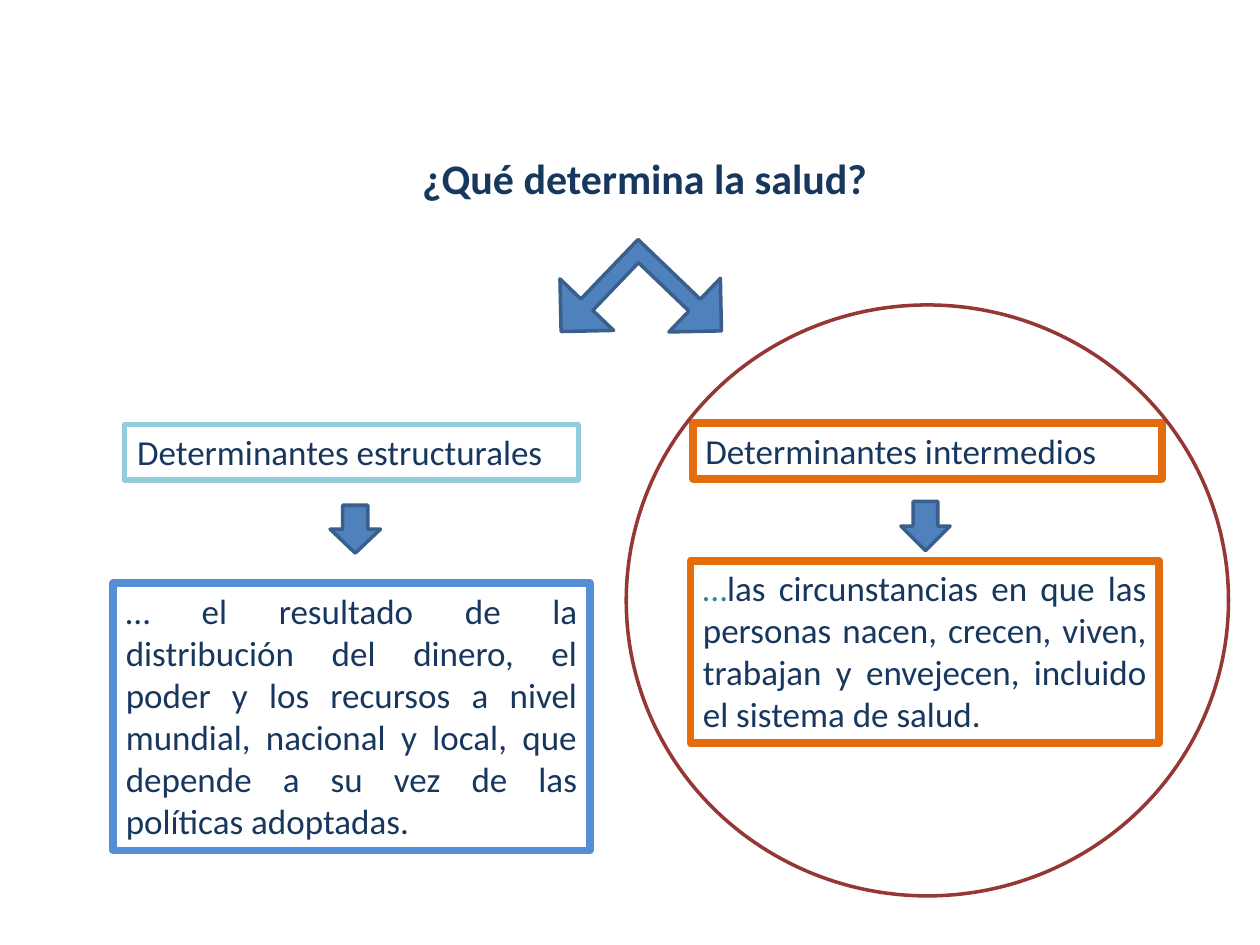
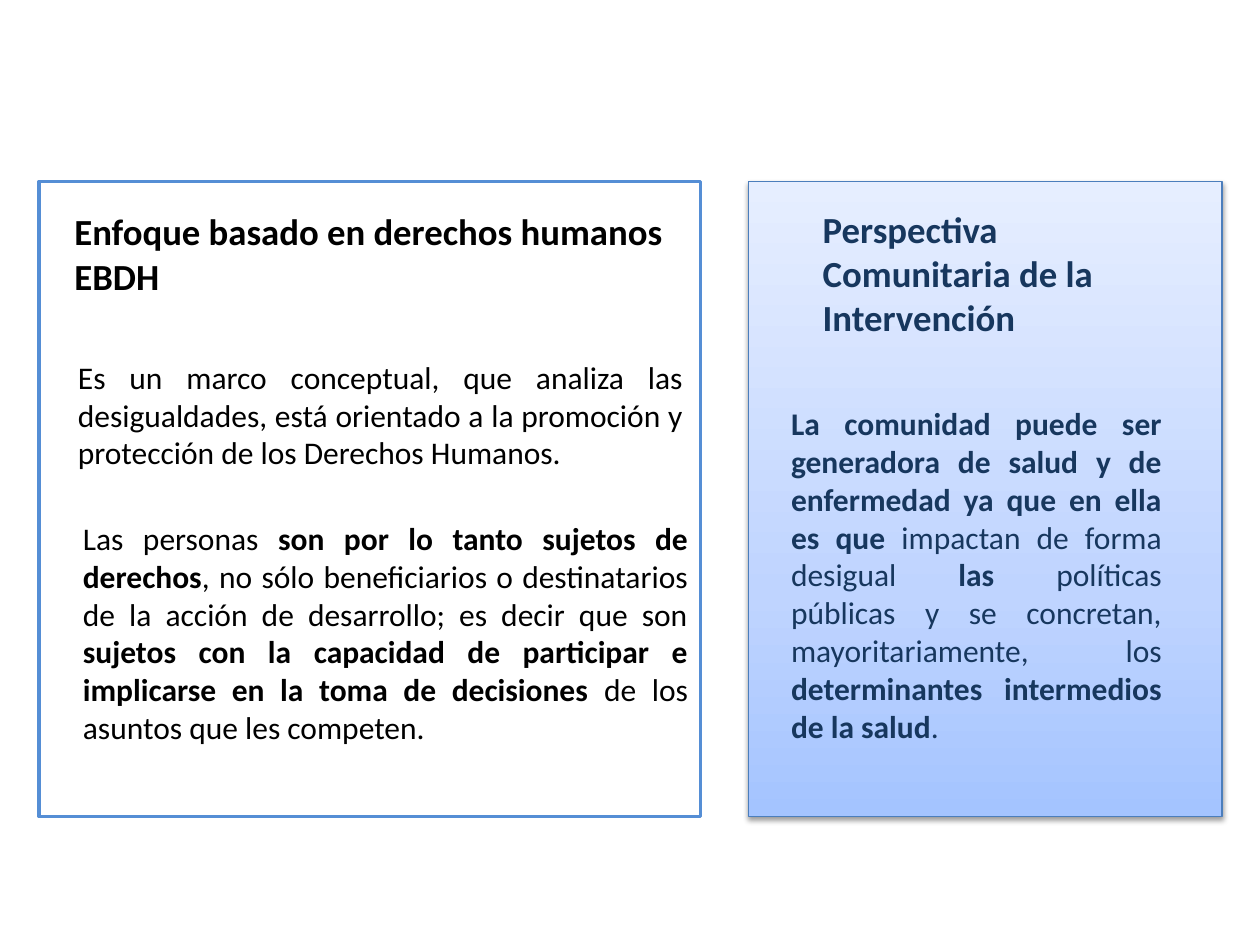
from copy import deepcopy
from dataclasses import dataclass
from lxml.etree import SubElement
from pptx import Presentation
from pptx.dml.color import RGBColor
from pptx.enum.shapes import MSO_SHAPE
from pptx.enum.text import MSO_ANCHOR, MSO_AUTO_SIZE, PP_ALIGN
from pptx.oxml.ns import qn
from pptx.util import Inches, Pt


@dataclass(frozen=True)
class Theme:
    font: str = "Calibri"
    navy: str = "17375E"
    black: str = "000000"
    white: str = "FFFFFF"
    teal: str = "31859C"
    blue: str = "558ED5"
    sky: str = "93CDDD"
    orange: str = "E46C0A"
    wine: str = "953735"
    arrow: str = "4F81BD"
    edge: str = "3A5F8C"
    rim: str = "4B7EBC"
    fade: tuple = ((0, "A4C4FF"), (0.35, "BFD4FF"), (1, "E6EEFF"))
    title: int = 24
    head: int = 21
    body: int = 20
    note: int = 18


T = Theme()
WIDE, HIGH = Inches(10), Inches(7.5)
COLS, ROWS = 100, 75
TIGHT, LOOSE = (0.07, 0.04), (0.1, 0.05)

QUERY = "¿Qué determina la salud?"
CAUSES = [
    dict(
        head="Determinantes estructurales", spot=(9.9, 33.7, 36, 4.4), rim=(T.sky, 3),
        arrow=(26.2, 40.1, 4, 3.8),
        body=[("… el resultado de la distribución del dinero, el poder y los recursos "
               "a nivel mundial, nacional y local, que depende a su vez de las "
               "políticas adoptadas.", T.navy)],
        place=(9, 46.3, 37.8, 21.2), frame=(T.blue, 4.5),
    ),
    dict(
        head="Determinantes intermedios", spot=(55, 33.6, 37.2, 4.4), rim=(T.orange, 4.5),
        arrow=(71.5, 39.8, 3.9, 3.9),
        body=[("…", T.teal),
              ("las circunstancias en que las personas nacen, crecen, viven, trabajan "
               "y envejecen, incluido el sistema de salud.", T.navy)],
        place=(54.8, 44.5, 37.2, 14.5), frame=(T.orange, 4.5),
    ),
]
FOCUS = ["Enfoque basado en derechos humanos", "EBDH"]
VIEW = "Perspectiva Comunitaria de la Intervención"
NOTES = [
    ((5.2, 27.9, 50, 10.1), T.black, [
        ("Es un marco conceptual, que analiza las desigualdades, está orientado a la "
         "promoción y protección de los Derechos Humanos.", False)]),
    ((5.6, 40.7, 50, 19.2), T.black, [
        ("Las personas ", False),
        ("son por lo tanto sujetos de derechos", True),
        (", no sólo beneficiarios o destinatarios de la acción de desarrollo; "
         "es decir que son ", False),
        ("sujetos con la capacidad de participar e implicarse en la toma de "
         "decisiones ", True),
        ("de los asuntos que les competen.", False)]),
    ((61.8, 31.6, 31.4, 28.3), T.navy, [
        ("La comunidad puede ser generadora de salud y de enfermedad ya que en "
         "ella es que ", True),
        ("impactan de forma desigual ", False),
        ("las ", True),
        ("políticas públicas y se concretan, mayoritariamente, los ", False),
        ("determinantes intermedios de la salud", True),
        (".", False)]),
]


def rgb(tone):
    return RGBColor.from_string(tone)


def area(spot):
    left, top, wide, high = spot
    return (round(left * WIDE / COLS), round(top * HIGH / ROWS),
            round(wide * WIDE / COLS), round(high * HIGH / ROWS))


def form(slide, kind, spot, line, fill=None):
    shape = slide.shapes.add_shape(kind, *area(spot))
    shape.shadow.inherit = False
    if fill:
        shape.fill.solid()
        shape.fill.fore_color.rgb = rgb(fill)
    else:
        shape.fill.background()
    tone, width = line
    shape.line.color.rgb = rgb(tone)
    shape.line.width = Pt(width)
    return shape


def setup(shape, pad):
    frame = shape.text_frame
    frame.word_wrap = True
    frame.auto_size = MSO_AUTO_SIZE.NONE
    frame.vertical_anchor = MSO_ANCHOR.TOP
    frame.margin_left = frame.margin_right = Inches(pad[0])
    frame.margin_top = frame.margin_bottom = Inches(pad[1])
    return frame


def style(para, size, tone=None, bold=None, align=PP_ALIGN.LEFT):
    para.alignment = align
    para.font.name = T.font
    para.font.size = Pt(size)
    para.font.bold = bold
    if tone:
        para.font.color.rgb = rgb(tone)


def write(shape, lines, size, tone, bold=False, pad=LOOSE):
    frame = setup(shape, pad)
    frame.text = "\n".join(lines)
    for para in frame.paragraphs:
        style(para, size, tone, bold)


def blend(shape):
    shape.fill.gradient()
    shape.fill.gradient_angle = 90
    stops = shape.element.spPr.find(".//" + qn("a:gsLst"))
    stops.append(deepcopy(stops[0]))
    for stop, (pos, tone) in zip(shape.fill.gradient_stops, T.fade):
        stop.position = pos
        stop.color.rgb = rgb(tone)


def shade(shape):
    glow = shape.element.spPr.find(qn("a:effectLst"))
    cast = SubElement(glow, qn("a:outerShdw"), blurRad=str(Pt(3.1)),
                      dist=str(Pt(1.6)), dir="5400000", rotWithShape="0")
    ink = SubElement(cast, qn("a:srgbClr"), val=T.black)
    SubElement(ink, qn("a:alpha"), val="38000")


def label(slide, spot, lines, size, tone):
    title = slide.shapes.title
    title.left, title.top, title.width, title.height = area(spot)
    write(title, lines, size, tone, True, TIGHT)
    slide.shapes.element.append(title.element)


def causes(slide):
    label(slide, (32.8, 11.7, 43.3, 6.1), [QUERY], T.title, T.navy)
    steel = (T.edge, 2)
    for cause in CAUSES:
        box = form(slide, MSO_SHAPE.RECTANGLE, cause["place"], cause["frame"])
        para = setup(box, LOOSE).paragraphs[0]
        for text, tone in cause["body"]:
            run = para.add_run()
            run.text = text
            run.font.color.rgb = rgb(tone)
        style(para, T.body, align=PP_ALIGN.JUSTIFY)
        form(slide, MSO_SHAPE.DOWN_ARROW, cause["arrow"], steel, T.arrow)
        box = form(slide, MSO_SHAPE.RECTANGLE, cause["spot"], cause["rim"])
        write(box, [cause["head"]], T.body, T.navy)
    fork = form(slide, MSO_SHAPE.LEFT_UP_ARROW, (44.8, 18.3, 12.1, 11.8), steel, T.arrow)
    fork.rotation = 223.8
    for spot, share in enumerate((0.11, 0.25, 0.25)):
        fork.adjustments[spot] = share
    form(slide, MSO_SHAPE.OVAL, (49.7, 24.2, 47.8, 46.9), (T.wine, 2))


def views(slide):
    top, high = 14.4, 50.4
    panel = form(slide, MSO_SHAPE.RECTANGLE, (59.4, top, 37.6, high), (T.rim, 0.75))
    blend(panel)
    shade(panel)
    form(slide, MSO_SHAPE.RECTANGLE, (3.1, top, 52.5, high), (T.blue, 2), T.white)
    label(slide, (5.2, 16.2, 50.4, 9.1), FOCUS, T.head, T.black)
    box = slide.shapes.add_textbox(*area((64.6, 16, 27.3, 11.6)))
    write(box, [VIEW], T.head, T.navy, True, TIGHT)
    for spot, tone, runs in NOTES:
        box = slide.shapes.add_textbox(*area(spot))
        para = setup(box, LOOSE).paragraphs[0]
        for text, bold in runs:
            run = para.add_run()
            run.text = text
            run.font.bold = bold
        style(para, T.note, tone, align=PP_ALIGN.JUSTIFY)


def main():
    deck = Presentation()
    deck.slide_width, deck.slide_height = WIDE, HIGH
    for build in (causes, views):
        build(deck.slides.add_slide(deck.slide_layouts[5]))
    deck.save("out.pptx")


if __name__ == "__main__":
    main()
